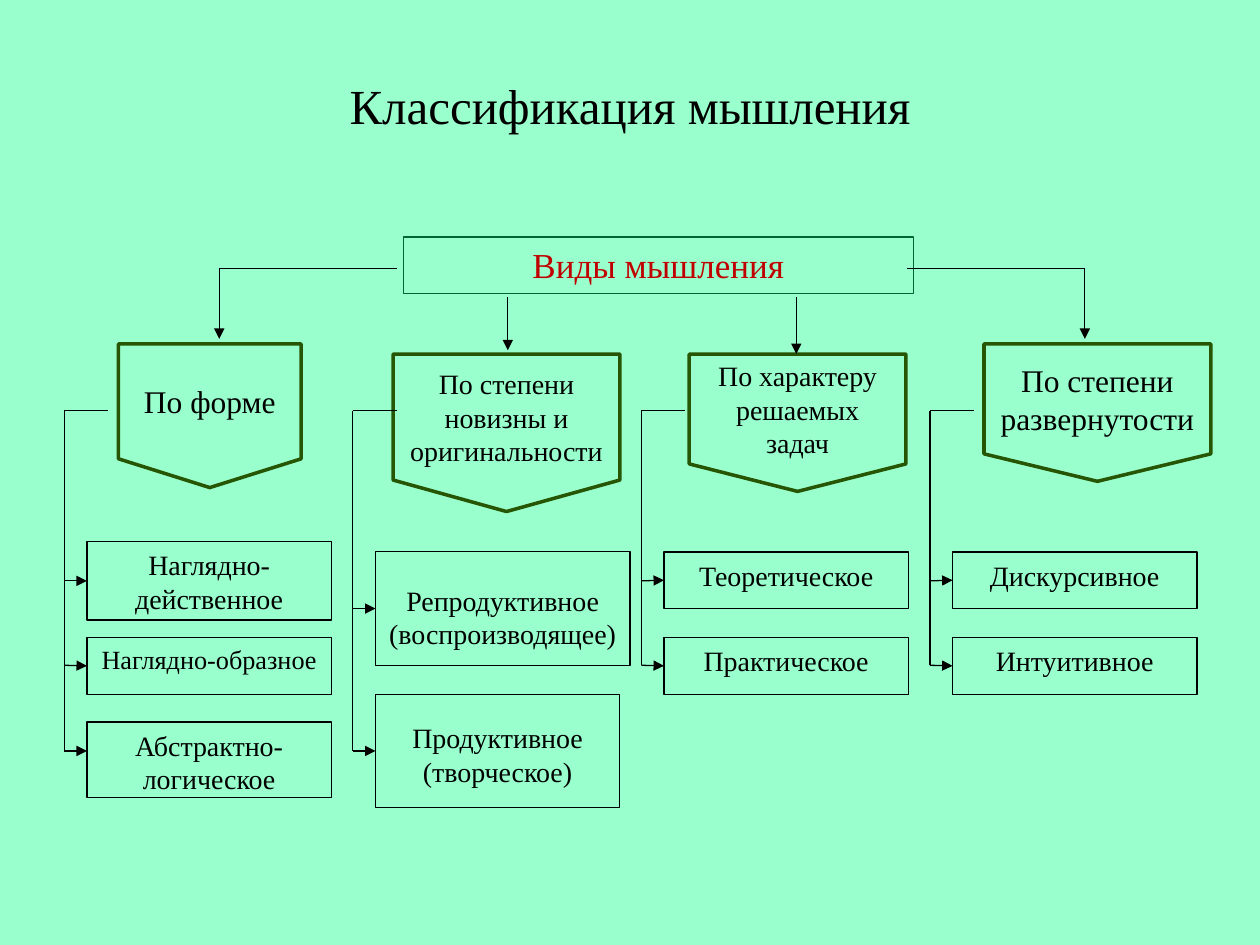
"""Build a slide that classifies the kinds of thinking as a tree."""
from lxml import etree
from pptx import Presentation, util as u
from pptx.dml.color import RGBColor
from pptx.enum import shapes, text
from pptx.oxml.ns import qn

MINT = RGBColor(0x99, 0xFF, 0xCC)
BLACK = RGBColor(0, 0, 0)
GREEN = RGBColor(0, 0x66, 0x33)
OLIVE = RGBColor(0x26, 0x55, 0x04)
RED = RGBColor(0xC0, 0, 0)
FONT = "Times New Roman"

TITLE = "Классификация мышления"
ROOT = "Виды мышления"
# head: lines, size, left, top, width, height
# kinds: text, size, top, width, height, arrow y, top inset
COLS = [
    {"head": (["По форме"], 18, 0.94, 2.73, 1.45, 1.14),
     "drop": (2.13, 2.69),
     "kinds": [("Наглядно-действенное", 16, 4.3, 1.94, 0.62, 4.61, 0.05),
               ("Наглядно-образное", 15, 5.06, 1.94, 0.45, 5.28, 0.05),
               ("Абстрактно-логическое", 16, 5.73, 1.94, 0.6, 5.96, 0.05)]},
    {"head": (["По степени новизны и оригинальности"], 16, 3.12, 2.81, 1.8, 1.25),
     "drop": (2.36, 2.78),
     "kinds": [("Репродуктивное (воспроизводящее)", 16, 4.38, 2.02, 0.9, 4.83, 0.25),
               ("Продуктивное (творческое)", 16, 5.51, 1.94, 0.9, 5.96, 0.21)]},
    {"head": (["По характеру", "решаемых задач"], 16, 5.47, 2.81, 1.72, 1.09),
     "drop": (2.36, 2.81),
     "kinds": [("Теоретическое", 16, 4.38, 1.94, 0.45, 4.61, 0.05),
               ("Практическое", 16, 5.06, 1.94, 0.45, 5.28, 0.05)]},
    {"head": (["По степени развернутости"], 18, 7.81, 2.73, 1.8, 1.09),
     "drop": (2.13, 2.69),
     "kinds": [("Дискурсивное", 16, 4.38, 1.94, 0.45, 4.61, 0.05),
               ("Интуитивное", 16, 5.06, 1.94, 0.45, 5.28, 0.05)]},
]
LEFT, STEP, STUB, GAP, DROP = 0.51, 2.29, 0.35, 0.18, 1.23
FORK, BUS = 3.26, 2.13


def write(shape, lines, size, color=BLACK, inset=0.05, anchor=text.MSO_ANCHOR.TOP):
    frame = shape.text_frame
    frame.word_wrap = True
    frame.margin_top = u.Inches(inset)
    frame.vertical_anchor = anchor
    for n, line in enumerate(lines):
        para = frame.add_paragraph() if n else frame.paragraphs[0]
        para.alignment = text.PP_ALIGN.CENTER
        run = para.add_run()
        run.text = line
        run.font.name, run.font.size = FONT, u.Pt(size)
        run.font.color.rgb = color


def block(slide, kind, place, color, width):
    shape = slide.shapes.add_shape(kind, *map(u.Inches, place))
    shape.shadow.inherit = False
    shape.fill.background()
    shape.line.color.rgb = color
    shape.line.width = u.Pt(width)
    return shape


def wire(slide, x1, y1, x2, y2, arrow=False):
    line = slide.shapes.add_connector(
        shapes.MSO_CONNECTOR.STRAIGHT, *map(u.Inches, (x1, y1, x2, y2)))
    line.line.color.rgb = BLACK
    line.line.width = u.Pt(0.75)
    if arrow:
        etree.SubElement(line.line._get_or_add_ln(), qn("a:tailEnd"), type="triangle")
    etree.SubElement(line._element.spPr, qn("a:effectLst"))
    return line


def branch(slide, n, col):
    trunk = LEFT + n * STEP
    lines, size, *place = col["head"]
    head = block(slide, shapes.MSO_SHAPE.FLOWCHART_OFFPAGE_CONNECTOR, place, OLIVE, 2)
    write(head, lines, size, anchor=text.MSO_ANCHOR.MIDDLE)
    top, end = col["drop"]
    wire(slide, trunk + DROP, top, trunk + DROP, end, True)
    wire(slide, trunk, FORK, trunk + STUB, FORK)
    wire(slide, trunk, FORK, trunk, col["kinds"][-1][5])
    for label, size, top, width, height, y, inset in col["kinds"]:
        left = trunk + GAP
        box = block(slide, shapes.MSO_SHAPE.RECTANGLE,
                    (left, top, width, height), BLACK, 0.75)
        write(box, [label], size, inset=inset)
        arrow = wire(slide, trunk, y, left, y, True)
        if abs(top + height / 2 - y) < 0.02:
            arrow.end_connect(box, 1)


def main():
    deck = Presentation()
    deck.slide_width, deck.slide_height = u.Inches(10), u.Inches(7.5)
    slide = deck.slides.add_slide(deck.slide_layouts[6])
    slide.background.fill.solid()
    slide.background.fill.fore_color.rgb = MINT
    title = slide.shapes.add_textbox(*map(u.Inches, (2.42, 0.55, 5.16, 0.55)))
    write(title, [TITLE], 28)
    root = block(slide, shapes.MSO_SHAPE.RECTANGLE, (3.2, 1.88, 4.05, 0.45), GREEN, 0.75)
    write(root, [ROOT], 20, RED)
    wire(slide, LEFT + DROP, BUS, 3.15, BUS)
    wire(slide, 7.2, BUS, LEFT + 3 * STEP + DROP, BUS)
    for n, col in enumerate(COLS):
        branch(slide, n, col)
    deck.save("out.pptx")


if __name__ == "__main__":
    main()
